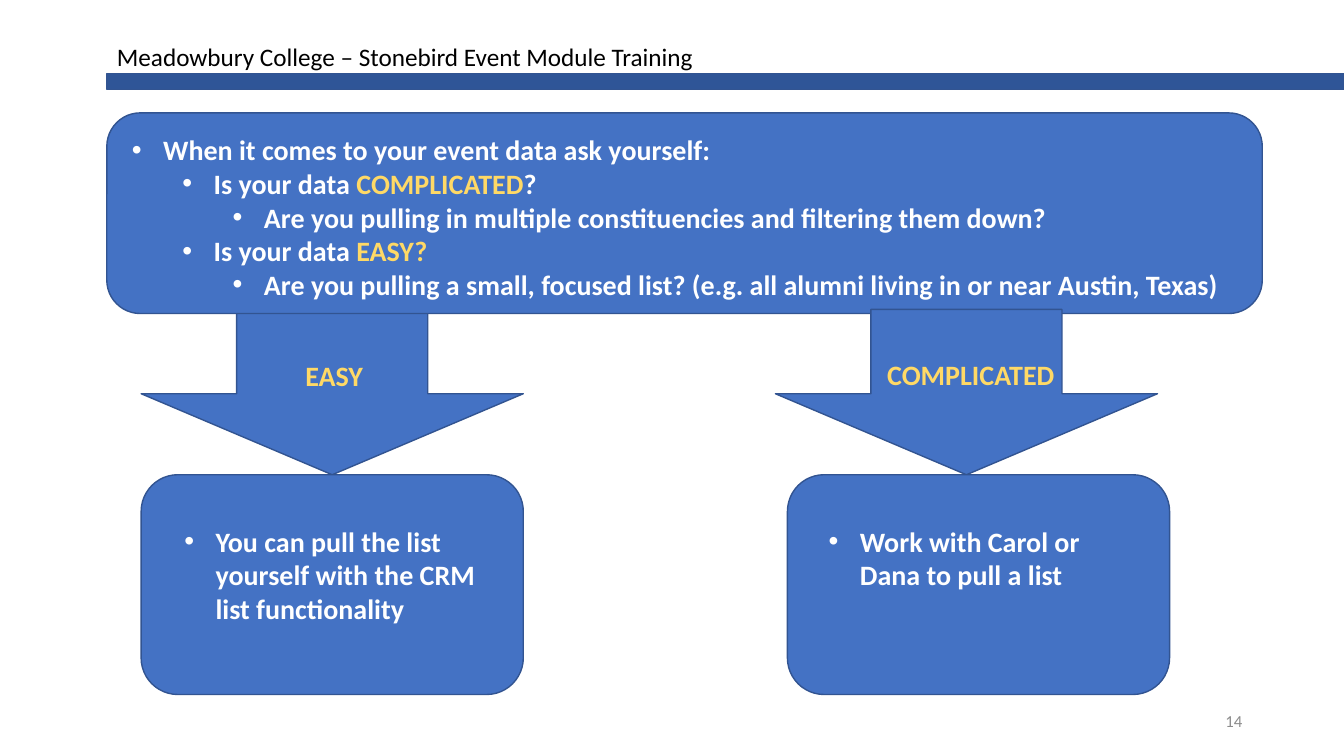
from lxml.etree import SubElement
from pptx import Presentation
from pptx.dml.color import RGBColor
from pptx.enum.shapes import MSO_SHAPE as Preset
from pptx.enum.text import MSO_ANCHOR as Anchor, PP_ALIGN as Align
from pptx.oxml.ns import qn
from pptx.util import Inches, Pt

FONT = "Calibri"
COLORS = {
    "box": "4472C4",
    "bar": "2F5597",
    "outline": "325491",
    "white": "FFFFFF",
    "gold": "FFD966",
    "black": "000000",
    "grey": "8C8C8C",
}
HEADER = "Meadowbury College – Stonebird Event Module Training"
PAGE_NUMBER = "14"
QUESTIONS = [
    (0, [("When it comes to your event data ask yourself:", "white")]),
    (1, [("Is your data ", "white"), ("COMPLICATED", "gold"), ("?", "white")]),
    (2, [("Are you pulling in multiple constituencies and filtering them down?", "white")]),
    (1, [("Is your data ", "white"), ("EASY?", "gold")]),
    (2, [("Are you pulling a small, focused list? "
          "(e.g. all alumni living in or near Austin, Texas)", "white")]),
]
BRANCHES = [
    {"label": "EASY", "label_at": (2.93, 3.51), "arrow_left": 1.4, "box_left": 1.4,
     "advice_left": 1.73,
     "advice": "You can pull the list yourself with the CRM list functionality"},
    {"label": "COMPLICATED", "label_at": (8.7, 3.5), "arrow_left": 7.69, "box_left": 7.81,
     "advice_left": 8.12,
     "advice": "Work with Carol or Dana to pull a list"},
]

WIDTH, HEIGHT = 13.33, 7.5
MARGIN = 1.06
BRANCH_WIDTH = 3.79
ARROW_TOP, BOX_TOP, BOX_HEIGHT = 3.07, 4.71, 2.18
HANGING, LEVEL_STEP = 0.31, 0.5


def inches(*lengths):
    return [Inches(length) for length in lengths]


def add_block(slide, preset, left, top, width, height, fill="box"):
    shape = slide.shapes.add_shape(preset, *inches(left, top, width, height))
    shape.shadow.inherit = False
    shape.fill.solid()
    shape.fill.fore_color.rgb = RGBColor.from_string(COLORS[fill])
    shape.line.color.rgb = RGBColor.from_string(COLORS["outline"])
    shape.line.width = Pt(1)
    return shape


def add_run(paragraph, text, color, size=20, bold=True):
    run = paragraph.add_run()
    run.text = text
    run.font.name = FONT
    run.font.size = Pt(size)
    run.font.bold = bold
    run.font.color.rgb = RGBColor.from_string(COLORS[color])


def add_text_box(slide, left, top, width, height):
    text_box = slide.shapes.add_textbox(*inches(left, top, width, height))
    text_box.text_frame.word_wrap = True
    return text_box.text_frame


def set_bullet(paragraph, level):
    paragraph.level = level
    properties = paragraph._p.get_or_add_pPr()
    properties.set("marL", str(Inches(HANGING + level * LEVEL_STEP)))
    properties.set("indent", str(-Inches(HANGING)))
    SubElement(properties, qn("a:buFont")).set("typeface", "Arial")
    SubElement(properties, qn("a:buChar")).set("char", "•")


def add_bullets(slide, left, top, width, height, items):
    frame = add_text_box(slide, left, top, width, height)
    for index, (level, runs) in enumerate(items):
        paragraph = frame.add_paragraph() if index else frame.paragraphs[0]
        set_bullet(paragraph, level)
        for text, color in runs:
            add_run(paragraph, text, color)


def add_header(slide):
    title = slide.shapes.title
    title.left, title.top, title.width, title.height = inches(MARGIN, 0.36, 12.11, 0.4)
    title.text_frame.vertical_anchor = Anchor.TOP
    title.text_frame.word_wrap = True
    paragraph = title.text_frame.paragraphs[0]
    paragraph.alignment = Align.LEFT
    add_run(paragraph, HEADER, "black", 18, False)


def add_arrow(slide, branch):
    arrow = add_block(slide, Preset.DOWN_ARROW, branch["arrow_left"], ARROW_TOP,
                      BRANCH_WIDTH, BOX_TOP - ARROW_TOP)
    arrow.adjustments[1] = 0.49


def add_branch_text(slide, branch):
    add_block(slide, Preset.ROUNDED_RECTANGLE, branch["box_left"], BOX_TOP,
              BRANCH_WIDTH, BOX_HEIGHT)
    label = add_text_box(slide, *branch["label_at"], 2.02, 0.44)
    add_run(label.paragraphs[0], branch["label"], "gold")
    add_bullets(slide, branch["advice_left"], 5.15, 3.18, 1.11,
                [(0, [(branch["advice"], "white")])])


def add_page_number(slide):
    frame = add_text_box(slide, 9.42, 6.95, 3, 0.4)
    frame.vertical_anchor = Anchor.MIDDLE
    frame.paragraphs[0].alignment = Align.RIGHT
    add_run(frame.paragraphs[0], PAGE_NUMBER, "grey", 12, False)


def main():
    presentation = Presentation()
    presentation.slide_width, presentation.slide_height = inches(WIDTH, HEIGHT)
    slide = presentation.slides.add_slide(presentation.slide_layouts[5])
    easy, complicated = BRANCHES
    add_header(slide)
    add_arrow(slide, easy)
    add_block(slide, Preset.ROUNDED_RECTANGLE, MARGIN, 1.12, 11.46, 1.99)
    add_block(slide, Preset.RECTANGLE, MARGIN, 0.73, WIDTH - MARGIN, 0.16, "bar")
    add_bullets(slide, 1.21, 1.27, 11.15, 1.8, QUESTIONS)
    add_arrow(slide, complicated)
    for branch in BRANCHES:
        add_branch_text(slide, branch)
    add_page_number(slide)
    presentation.save("out.pptx")


if __name__ == "__main__":
    main()
